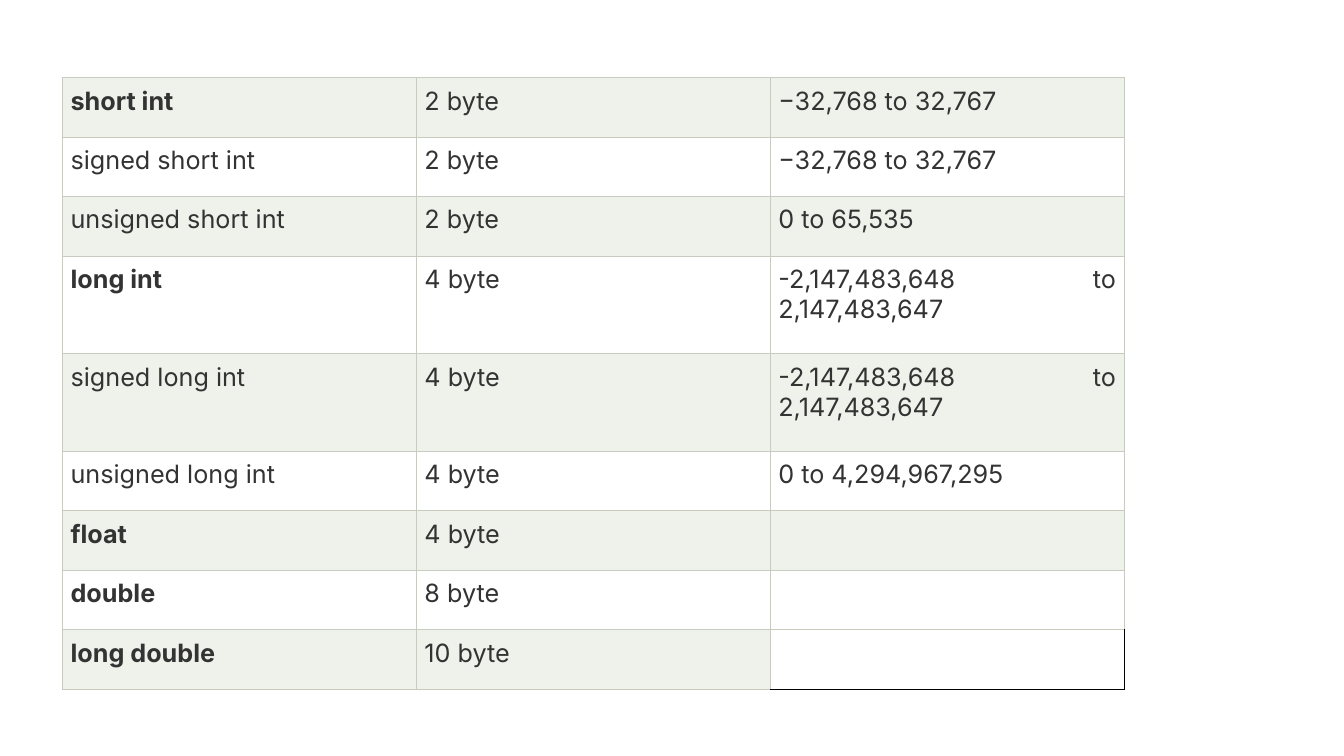
from lxml import etree
from pptx import Presentation
from pptx.dml.color import RGBColor
from pptx.enum.text import PP_ALIGN as Align
from pptx.oxml.ns import qn
from pptx.util import Inches, Pt

FONT = "Inter"
TEXT_COLOR = "333333"
BORDER_COLOR = "C7CCBE"
OUTER_BORDER_COLOR = "000000"
BAND_FILLS = ("EFF1EB", "FFFFFF")
COLUMN_WIDTH = 3.51
ROW_HEIGHT = 0.59
TALL_ROW_HEIGHT = 0.97
LONG_RANGE = "-2,147,483,648 to 2,147,483,647"

DATA_TYPES = [
    ("short int", "2 byte", "−32,768 to 32,767"),
    ("signed short int", "2 byte", "−32,768 to 32,767"),
    ("unsigned short int", "2 byte", "0 to 65,535"),
    ("long int", "4 byte", LONG_RANGE),
    ("signed long int", "4 byte", LONG_RANGE),
    ("unsigned long int", "4 byte", "0 to 4,294,967,295"),
    ("float", "4 byte", ""),
    ("double", "8 byte", ""),
    ("long double", "10 byte", ""),
]
BOLD_TYPES = {"short int", "long int", "float", "double", "long double"}


def color(hex_string):
    return RGBColor.from_string(hex_string)


def set_borders(cell, left, right, top, bottom):
    """Draw the four cell borders; call before setting the fill."""
    properties = cell._tc.get_or_add_tcPr()
    for side, hex_string in zip("LRTB", (left, right, top, bottom)):
        line = etree.SubElement(properties, qn(f"a:ln{side}"), w=str(Pt(0.75)))
        fill = etree.SubElement(line, qn("a:solidFill"))
        etree.SubElement(fill, qn("a:srgbClr"), val=hex_string)


def set_text(cell, text, bold):
    cell.margin_left = cell.margin_right = Inches(0.08)
    cell.margin_top = cell.margin_bottom = Inches(0.08)
    cell.text = text
    paragraph = cell.text_frame.paragraphs[0]
    paragraph.alignment = Align.JUSTIFY
    font = paragraph.font
    font.name = FONT
    font.size = Pt(18)
    font.bold = bold
    font.color.rgb = color(TEXT_COLOR)


def add_type_table(slide, left, top):
    row_count, column_count = len(DATA_TYPES), len(DATA_TYPES[0])
    heights = [TALL_ROW_HEIGHT if row[2] == LONG_RANGE else ROW_HEIGHT
               for row in DATA_TYPES]
    table = slide.shapes.add_table(
        row_count, column_count, Inches(left), Inches(top),
        Inches(COLUMN_WIDTH * column_count), Inches(sum(heights))).table
    table.first_row = table.horz_banding = False
    for column in table.columns:
        column.width = Inches(COLUMN_WIDTH)

    for row_index, values in enumerate(DATA_TYPES):
        table.rows[row_index].height = Inches(heights[row_index])
        for column_index, text in enumerate(values):
            cell = table.cell(row_index, column_index)
            set_text(cell, text, bold=text in BOLD_TYPES)
            is_corner = (row_index, column_index) == (row_count - 1, column_count - 1)
            outer = OUTER_BORDER_COLOR if is_corner else BORDER_COLOR
            set_borders(cell, BORDER_COLOR, outer, BORDER_COLOR, outer)
            if is_corner:
                cell.fill.background()
            else:
                cell.fill.solid()
                cell.fill.fore_color.rgb = color(BAND_FILLS[row_index % 2])


def main():
    presentation = Presentation()
    presentation.slide_width = Inches(13.33)
    presentation.slide_height = Inches(7.5)
    slide = presentation.slides.add_slide(presentation.slide_layouts[6])
    add_type_table(slide, 0.62, 0.77)
    presentation.save("out.pptx")


if __name__ == "__main__":
    main()
